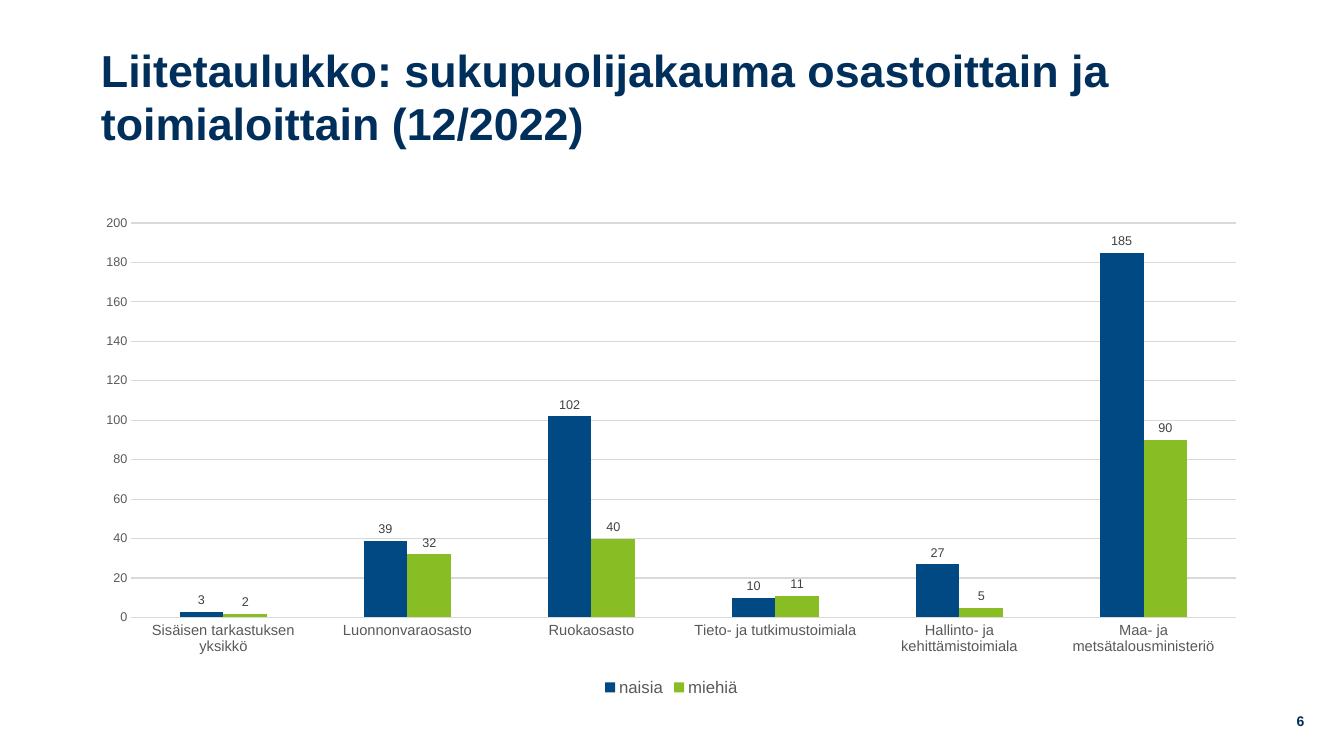
from lxml import etree
from pptx import Presentation
from pptx import util as u
from pptx.chart import data as chart_data
from pptx.dml.color import RGBColor
from pptx.enum import chart as ch
from pptx.enum import text
from pptx.oxml import ns

COLORS = {
    "navy": "002F5B",
    "women": "004982",
    "men": "89BD24",
    "grid": "D9D9D9",
    "axis": "595959",
    "label": "404040",
}
SERIES = [
    ("naisia", "women", (3, 39, 102, 10, 27, 185)),
    ("miehiä", "men", (2, 32, 40, 11, 5, 90)),
]
DEPARTMENTS = [
    "Sisäisen tarkastuksen yksikkö",
    "Luonnonvaraosasto",
    "Ruokaosasto",
    "Tieto- ja tutkimustoimiala",
    "Hallinto- ja kehittämistoimiala",
    "Maa- ja metsätalousministeriö",
]
PLOT_LAYOUT = [
    ("layoutTarget", "inner"),
    ("xMode", "edge"),
    ("yMode", "edge"),
    ("x", "0.035"),
    ("y", "0.049"),
    ("w", "0.951"),
    ("h", "0.786"),
]


def rgb(name):
    return RGBColor.from_string(COLORS[name])


def set_font(font, size, color, bold=False):
    font.name = "Arial"
    font.size = u.Pt(size)
    font.bold = bold
    font.color.rgb = rgb(color)


prs = Presentation()
prs.slide_width = u.Cm(33.87)
prs.slide_height = u.Cm(19.05)
s = prs.slides.add_slide(prs.slide_layouts[5])

title = s.shapes.title
title.left, title.top = u.Cm(2.29), u.Cm(0.58)
title.width, title.height = u.Cm(27.03), u.Cm(3.68)
tf = title.text_frame
tf.text = "Liitetaulukko: sukupuolijakauma osastoittain ja toimialoittain (12/2022)"
tf.vertical_anchor = text.MSO_ANCHOR.MIDDLE
p = tf.paragraphs[0]
p.alignment = text.PP_ALIGN.LEFT
set_font(p.runs[0].font, 32, "navy", True)

number = s.shapes.add_textbox(u.Cm(25.5), u.Cm(17.65), u.Cm(7.62), u.Cm(1.02))
tf = number.text_frame
tf.word_wrap = True
tf.text = "6"
tf.vertical_anchor = text.MSO_ANCHOR.MIDDLE
p = tf.paragraphs[0]
p.alignment = text.PP_ALIGN.RIGHT
set_font(p.runs[0].font, 10, "navy", True)

data = chart_data.CategoryChartData()
data.categories = DEPARTMENTS
for name, color, values in SERIES:
    data.add_series(name, values)
chart = s.shapes.add_chart(
    ch.XL_CHART_TYPE.COLUMN_CLUSTERED,
    u.Cm(2.29), u.Cm(5), u.Cm(29.26), u.Cm(12.65), data,
).chart
chart.has_title = False
set_font(chart.font, 10, "axis")

chart.has_legend = True
chart.legend.position = ch.XL_LEGEND_POSITION.BOTTOM
chart.legend.include_in_layout = False
set_font(chart.legend.font, 12, "axis")

plot = chart.plots[0]
plot.gap_width = 219
plot.overlap = 0
plot.vary_by_categories = False
for series, (name, color, values) in zip(plot.series, SERIES):
    series.format.fill.solid()
    series.format.fill.fore_color.rgb = rgb(color)
    labels = series.data_labels
    labels.show_value = True
    labels.position = ch.XL_LABEL_POSITION.OUTSIDE_END
    set_font(labels.font, 9, "label")

for axis, size in ((chart.category_axis, 10.5), (chart.value_axis, 9)):
    axis.major_tick_mark = ch.XL_TICK_MARK.NONE
    axis.minor_tick_mark = ch.XL_TICK_MARK.NONE
    set_font(axis.tick_labels.font, size, "axis")

value_axis = chart.value_axis
value_axis.minimum_scale = 0
value_axis.maximum_scale = 200
value_axis.major_unit = 20
value_axis.has_major_gridlines = True
value_axis.format.line.fill.background()
for line in (chart.category_axis.format.line, value_axis.major_gridlines.format.line):
    line.color.rgb = rgb("grid")
    line.width = u.Pt(0.75)

layout = etree.Element(ns.qn("c:layout"))
manual = etree.SubElement(layout, ns.qn("c:manualLayout"))
for tag, value in PLOT_LAYOUT:
    etree.SubElement(manual, ns.qn(f"c:{tag}")).set("val", value)
chart.element.find(".//" + ns.qn("c:plotArea")).insert(0, layout)

prs.save("out.pptx")
